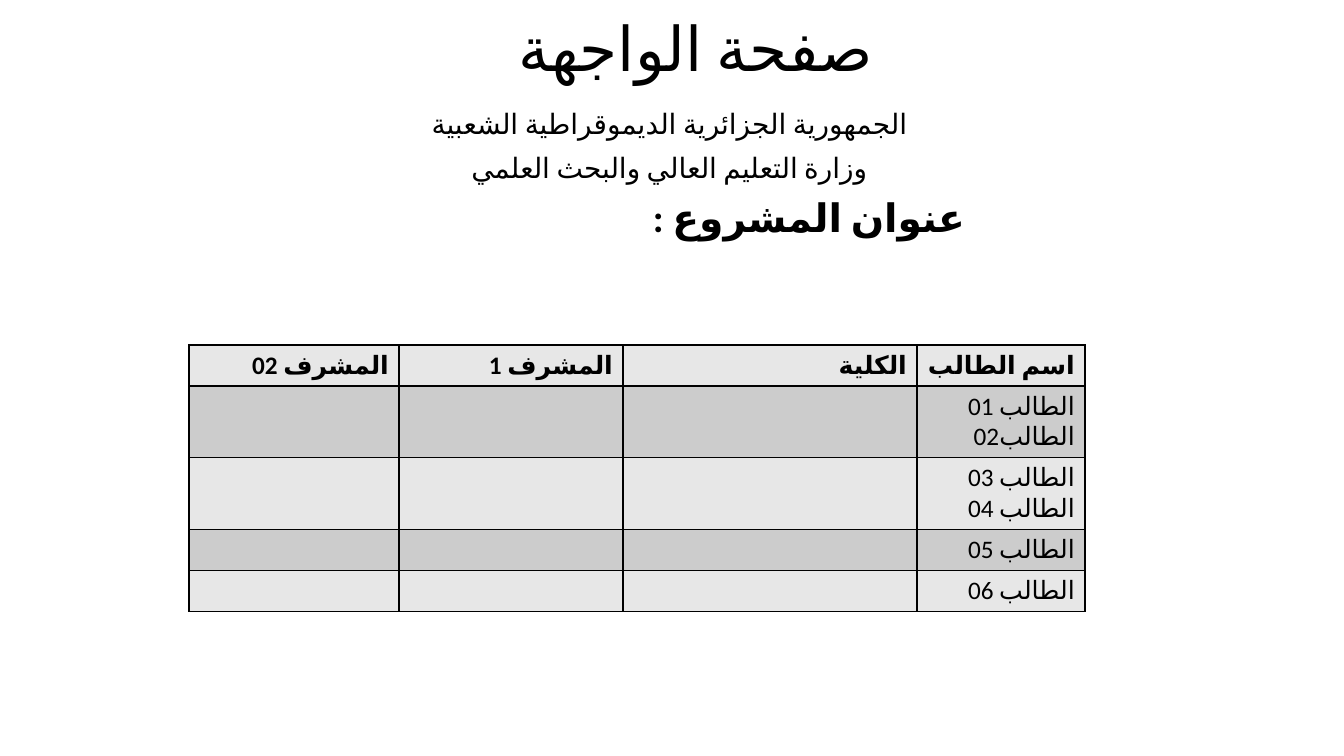
from dataclasses import dataclass

from lxml import etree
from pptx import Presentation
from pptx import util as u
from pptx.dml.color import RGBColor
from pptx.enum import lang, text
from pptx.oxml import ns

COLORS = {"ink": "000000", "light": "E7E7E7", "dark": "CCCCCC"}
FONT = "Calibri"
CENTER, RIGHT = text.PP_ALIGN.CENTER, text.PP_ALIGN.RIGHT


@dataclass(frozen=True)
class Box:
    left: int
    top: int
    width: int
    height: int


@dataclass(frozen=True)
class Line:
    words: str
    size: int
    align: text.PP_ALIGN = RIGHT
    bold: bool = False
    indent: int = 0
    spacing: float = 1.0
    before: int = 0


def px(length: int) -> u.Emu:
    return u.Emu(round(length * 914400 / 100.8))


def place(shape, box: Box) -> None:
    shape.left, shape.top = px(box.left), px(box.top)
    shape.width, shape.height = px(box.width), px(box.height)


def write(frame, lines: list[Line]) -> None:
    for index, line in enumerate(lines):
        paragraph = frame.paragraphs[0] if index == 0 else frame.add_paragraph()
        paragraph.alignment = line.align
        paragraph.line_spacing = line.spacing
        paragraph.space_before = u.Pt(line.before)
        properties = paragraph._p.get_or_add_pPr()
        properties.set("rtl", "1")
        properties.set("marL", str(px(line.indent)))
        properties.set("indent", "0")
        etree.SubElement(properties, ns.qn("a:buNone"))
        run = paragraph.add_run()
        run.text = line.words
        run.font.name = FONT
        run.font.size = u.Pt(line.size)
        run.font.bold = line.bold
        run.font.color.rgb = RGBColor.from_string(COLORS["ink"])
        run.font.language_id = lang.MSO_LANGUAGE_ID.ARABIC_ALGERIA
        etree.SubElement(run._r.get_or_add_rPr(), ns.qn("a:cs"), typeface=FONT)


def add_borders(cell) -> None:
    properties = cell._tc.get_or_add_tcPr()
    for position, side in enumerate(("lnL", "lnR", "lnT", "lnB")):
        border = etree.Element(ns.qn(f"a:{side}"), w=str(u.Pt(1)))
        fill = etree.SubElement(border, ns.qn("a:solidFill"))
        etree.SubElement(fill, ns.qn("a:srgbClr"), val=COLORS["ink"])
        properties.insert(position, border)


def add_students(slide, box: Box, widths: list[int], rows: list[list[str]]) -> None:
    frame = slide.shapes.add_table(
        len(rows), len(widths), px(box.left), px(box.top), px(box.width), px(box.height)
    )
    students = frame.table
    for column, width in zip(students.columns, widths):
        column.width = px(width)
    for row_index, row in enumerate(rows):
        students.rows[row_index].height = px(41)
        for column_index, words in enumerate(row):
            cell = students.cell(row_index, column_index)
            cell.fill.solid()
            shade = "dark" if row_index % 2 else "light"
            cell.fill.fore_color.rgb = RGBColor.from_string(COLORS[shade])
            add_borders(cell)
            if words:
                names = words.split("\n")
                write(cell.text_frame, [Line(name, 18, bold=row_index == 0) for name in names])


def main() -> None:
    deck = Presentation()
    deck.slide_width, deck.slide_height = px(1344), px(756)
    slide = deck.slides.add_slide(deck.slide_layouts[1])

    heading = slide.shapes.title
    place(heading, Box(418, 1, 712, 101))
    heading.text_frame.margin_right = px(166)
    heading.text_frame.vertical_anchor = text.MSO_ANCHOR.MIDDLE
    write(heading.text_frame, [Line("صفحة الواجهة", 44, CENTER, spacing=0.9)])

    institution = slide.placeholders[1]
    place(institution, Box(90, 105, 1159, 589))
    write(
        institution.text_frame,
        [
            Line("الجمهورية الجزائرية الديموقراطية الشعبية", 20, CENTER, spacing=0.9, before=10),
            Line("وزارة التعليم العالي والبحث العلمي", 20, CENTER, spacing=0.9, before=10),
            Line("عنوان المشروع :", 28, bold=True, indent=274, spacing=0.9, before=10),
        ],
    )

    students = ["الطالب 01\nالطالب02", "الطالب 03\nالطالب 04", "الطالب 05", "الطالب 06"]
    rows = [["المشرف 02", "المشرف 1", "الكلية", "اسم الطالب"]]
    rows += [["", "", "", student] for student in students]
    add_students(slide, Box(189, 345, 896, 205), [210, 224, 294, 168], rows)

    deck.save("out.pptx")


if __name__ == "__main__":
    main()
